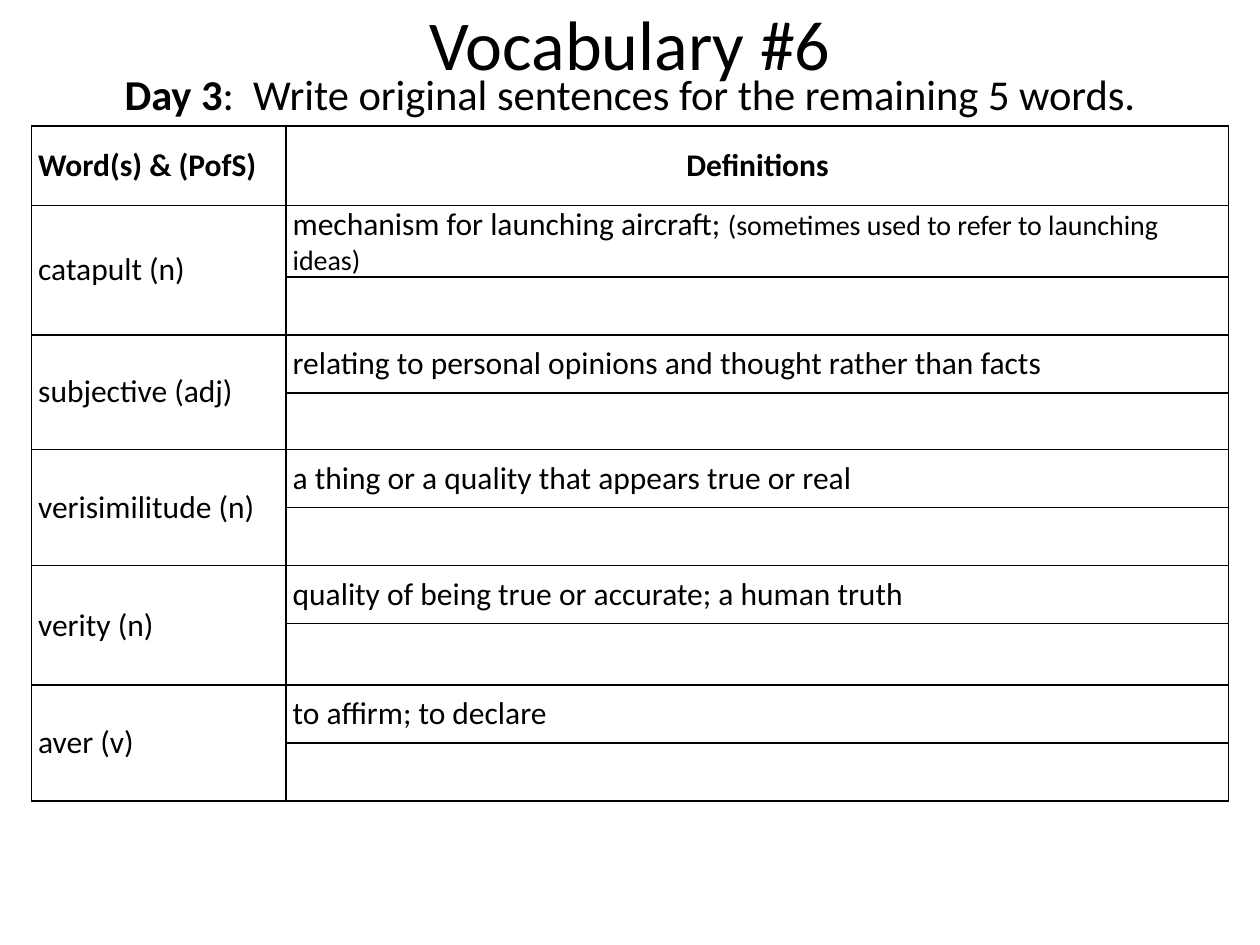
from lxml.etree import SubElement
from pptx import Presentation
from pptx.dml.color import RGBColor
from pptx.enum.text import MSO_ANCHOR, PP_ALIGN
from pptx.oxml.ns import qn
from pptx.util import Cm, Pt

BLACK = RGBColor(0, 0, 0)
WORDS = [
    ("catapult (n)", "mechanism for launching aircraft; "),
    ("subjective (adj)", "relating to personal opinions and thought rather than facts"),
    ("verisimilitude (n)", "a thing or a quality that appears true or real"),
    ("verity (n)", "quality of being true or accurate; a human truth"),
    ("aver (v)", "to affirm; to declare"),
]
ROWS = [1.6, 1.17, 1.17, 1.17, 1.14, 1.17, 1.17, 1.17, 1.24, 1.17, 1.17]
CELL = {"margin_left": Cm(0.13), "margin_right": Cm(0.13), "margin_top": 0,
        "margin_bottom": 0, "vertical_anchor": MSO_ANCHOR.MIDDLE}
TITLE = {"word_wrap": True, "vertical_anchor": MSO_ANCHOR.MIDDLE,
         "margin_top": 0, "margin_bottom": Cm(0.5)}
TASK = {"word_wrap": True, "vertical_anchor": MSO_ANCHOR.MIDDLE}


def write(para, text, size, bold=False):
    run = para.add_run()
    run.text = text
    look = {"name": "Calibri", "size": Pt(size), "bold": bold}
    for key, value in look.items():
        setattr(run.font, key, value)
    run.font.color.rgb = BLACK


def border(cell):
    props = cell._tc.get_or_add_tcPr()
    for spot, side in enumerate(("a:lnL", "a:lnR", "a:lnT", "a:lnB")):
        line = props.makeelement(qn(side), {"w": str(Pt(1))})
        fill = SubElement(line, qn("a:solidFill"))
        SubElement(fill, qn("a:srgbClr"), val=str(BLACK))
        props.insert(spot, line)


deck = Presentation()
deck.slide_width, deck.slide_height = Cm(25.4), Cm(19.05)
slide = deck.slides.add_slide(deck.slide_layouts[6])

heads = [
    ((1.9, 0.84, 21.6, 2.1), TASK,
     [("Day 3", 24.3, True), (":  Write original sentences for the remaining 5 words.", 24.3, False)]),
    ((1.27, 0, 22.86, 2.2), TITLE, [("Vocabulary #6", 40, False)]),
]
for place, form, runs in heads:
    frame = slide.shapes.add_textbox(*map(Cm, place)).text_frame
    for key, value in form.items():
        setattr(frame, key, value)
    para = frame.paragraphs[0]
    para.alignment = PP_ALIGN.CENTER
    for text, size, bold in runs:
        write(para, text, size, bold)

table = slide.shapes.add_table(len(ROWS), 2, Cm(0.64), Cm(2.54), Cm(24.13), Cm(sum(ROWS))).table
for col, width in zip(table.columns, (5.13, 19)):
    col.width = Cm(width)
for row, height in zip(table.rows, ROWS):
    row.height = Cm(height)
    for cell in row.cells:
        for key, value in CELL.items():
            setattr(cell, key, value)
        cell.fill.background()
        border(cell)

for col, text in enumerate(("Word(s) & (PofS)", "Definitions")):
    write(table.cell(0, col).text_frame.paragraphs[0], text, 18, True)
table.cell(0, 1).text_frame.paragraphs[0].alignment = PP_ALIGN.CENTER

for row, pair in zip(range(1, len(ROWS), 2), WORDS):
    table.cell(row, 0).merge(table.cell(row + 1, 0))
    for col, text in enumerate(pair):
        write(table.cell(row, col).text_frame.paragraphs[0], text, 18)
write(table.cell(1, 1).text_frame.paragraphs[0],
      "(sometimes used to refer to launching ideas)", 16)

deck.save("out.pptx")
